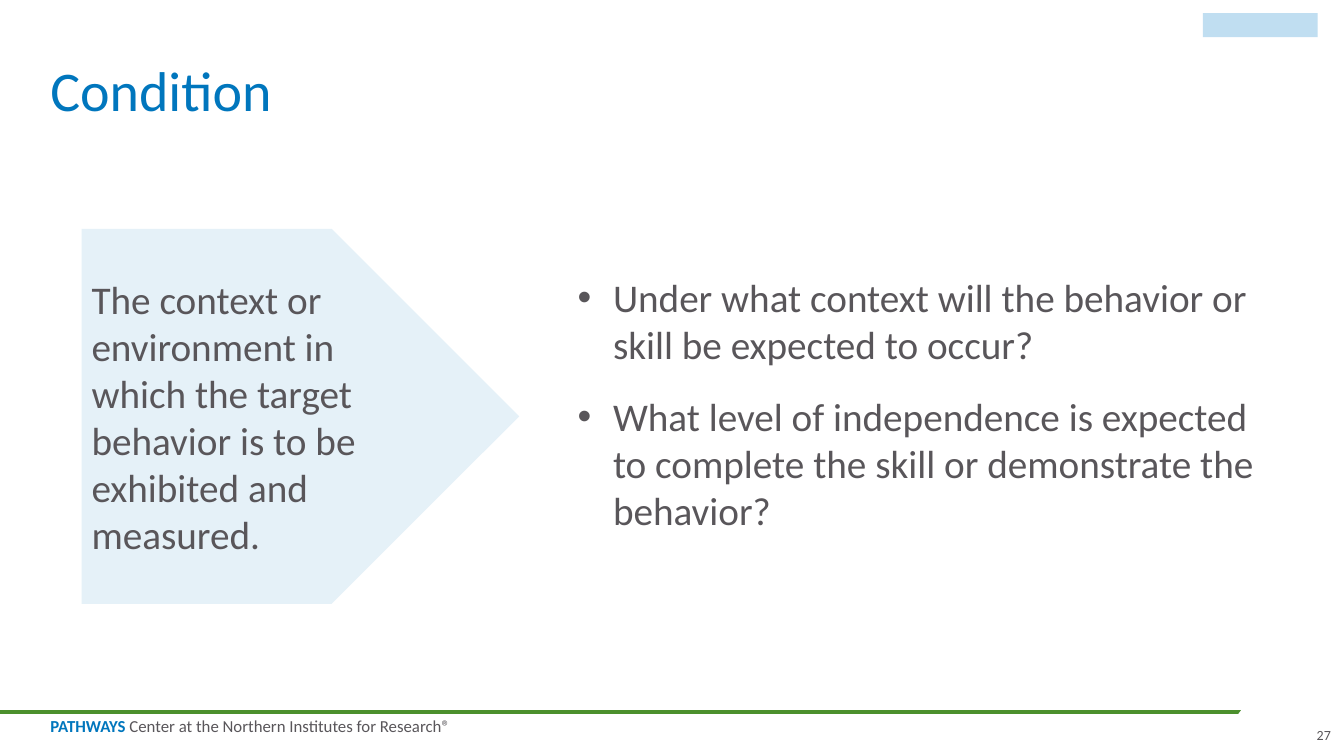
from lxml.etree import SubElement
from pptx import Presentation
from pptx.dml.color import RGBColor
from pptx.enum.shapes import MSO_CONNECTOR, MSO_SHAPE
from pptx.enum.text import MSO_ANCHOR, MSO_AUTO_SIZE, PP_ALIGN
from pptx.oxml.ns import qn
from pptx.util import Inches, Pt

WIDTH, HEIGHT = 13.33, 7.5
MARGIN = 0.5
INDENT = 0.35
BLUE, GRAY, GREEN, WHITE = "0076BD", "59565A", "4C902D", "FFFFFF"
PALE_BLUE, SKY_BLUE = "E5F1F8", "C0DEF1"

TITLE = "Condition"
DEFINITION = "The context or environment in which the target behavior is to be exhibited and measured."
QUESTIONS = [
    "Under what context will the behavior or skill be expected to occur?",
    "What level of independence is expected to complete the skill or demonstrate the behavior?",
]
FOOTER = [("PATHWAYS", BLUE, True), (" Center at the Northern Institutes for Research®", GRAY, False)]
PAGE_NUMBER = "27"

BOXES = {
    "title": (MARGIN, 0, 12.4, 1.23),
    "tag": (11.93, 0.13, 1.14, 0.24),
    "definition": (0.81, 2.27, 4.34, 3.72),
    "questions": (5.73, 2.71, 7.03, 2.83),
    "rule end": (12.16, 6.77, 1.19, 0.58),
    "footer": (MARGIN, 7.13, 4.02, 0.17),
    "page number": (13.03, 7.2, 0.17, 0.17),
}


def color(value):
    return RGBColor.from_string(value)


def box(name):
    return [Inches(length) for length in BOXES[name]]


def place(shape, name):
    shape.left, shape.top, shape.width, shape.height = box(name)


def set_frame(frame, inset=0, **formats):
    for side in ("left", "top", "right", "bottom"):
        setattr(frame, f"margin_{side}", Inches(inset))
    for key, value in {"word_wrap": True, "auto_size": MSO_AUTO_SIZE.NONE, **formats}.items():
        setattr(frame, key, value)


def set_font(font, size, value=GRAY, bold=False):
    for key, setting in {"name": "Calibri", "size": Pt(size), "bold": bold}.items():
        setattr(font, key, setting)
    font.color.rgb = color(value)


def add_block(slide, preset, name, fill):
    shape = slide.shapes.add_shape(preset, *box(name))
    shape.shadow.inherit = False
    shape.fill.solid()
    shape.fill.fore_color.rgb = color(fill)
    shape.line.fill.background()
    return shape


def add_bullet(paragraph):
    properties = paragraph._p.get_or_add_pPr()
    properties.set("marL", str(Inches(INDENT)))
    properties.set("indent", str(-Inches(INDENT)))
    bullet_color = SubElement(properties, qn("a:buClr"))
    SubElement(bullet_color, qn("a:srgbClr"), val=GRAY)
    SubElement(properties, qn("a:buFont"), typeface="Arial")
    SubElement(properties, qn("a:buChar"), char="•")


def add_footer(slide):
    rule = slide.shapes.add_connector(
        MSO_CONNECTOR.STRAIGHT, 0, Inches(7.06), Inches(13), Inches(7.06))
    rule.line.color.rgb = color(GREEN)
    rule.line.width = Pt(3)
    SubElement(rule._element.spPr, qn("a:effectLst"))
    add_block(slide, MSO_SHAPE.OVAL, "rule end", WHITE).rotation = 332.1

    frame = slide.shapes.add_textbox(*box("footer")).text_frame
    set_frame(frame, word_wrap=False)
    frame.paragraphs[0].line_spacing = 0.85
    for text, value, bold in FOOTER:
        run = frame.paragraphs[0].add_run()
        run.text = text
        set_font(run.font, 12, value, bold)

    frame = slide.shapes.add_textbox(*box("page number")).text_frame
    set_frame(frame, word_wrap=False, vertical_anchor=MSO_ANCHOR.BOTTOM)
    paragraph = frame.paragraphs[0]
    paragraph.text = PAGE_NUMBER
    paragraph.alignment = PP_ALIGN.RIGHT
    set_font(paragraph.font, 10)


def add_title(slide):
    title = slide.shapes.title
    place(title, "title")
    set_frame(title.text_frame, vertical_anchor=MSO_ANCHOR.BOTTOM)
    paragraph = title.text_frame.paragraphs[0]
    paragraph.text = TITLE
    paragraph.alignment = PP_ALIGN.LEFT
    paragraph.line_spacing = 0.9
    set_font(paragraph.font, 40, BLUE)


def add_definition(slide):
    arrow = add_block(slide, MSO_SHAPE.PENTAGON, "definition", PALE_BLUE)
    set_frame(arrow.text_frame, inset=0.1, vertical_anchor=MSO_ANCHOR.MIDDLE)
    paragraph = arrow.text_frame.paragraphs[0]
    paragraph.text = DEFINITION
    paragraph.alignment = PP_ALIGN.LEFT
    set_font(paragraph.font, 28)


def add_questions(slide):
    body = slide.placeholders[1]
    place(body, "questions")
    body.fill.solid()
    body.fill.fore_color.rgb = color(WHITE)
    frame = body.text_frame
    set_frame(frame, vertical_anchor=MSO_ANCHOR.TOP)
    for index, question in enumerate(QUESTIONS):
        paragraph = frame.add_paragraph() if index else frame.paragraphs[0]
        paragraph.text = question
        add_bullet(paragraph)
        paragraph.line_spacing = 1.0
        paragraph.space_before = Pt(18 if index else 0)
        set_font(paragraph.font, 28)


def main():
    presentation = Presentation()
    presentation.slide_width, presentation.slide_height = Inches(WIDTH), Inches(HEIGHT)
    slide = presentation.slides.add_slide(presentation.slide_layouts[1])
    add_footer(slide)
    add_title(slide)
    add_block(slide, MSO_SHAPE.RECTANGLE, "tag", SKY_BLUE)
    add_definition(slide)
    add_questions(slide)
    presentation.save("out.pptx")


if __name__ == "__main__":
    main()
